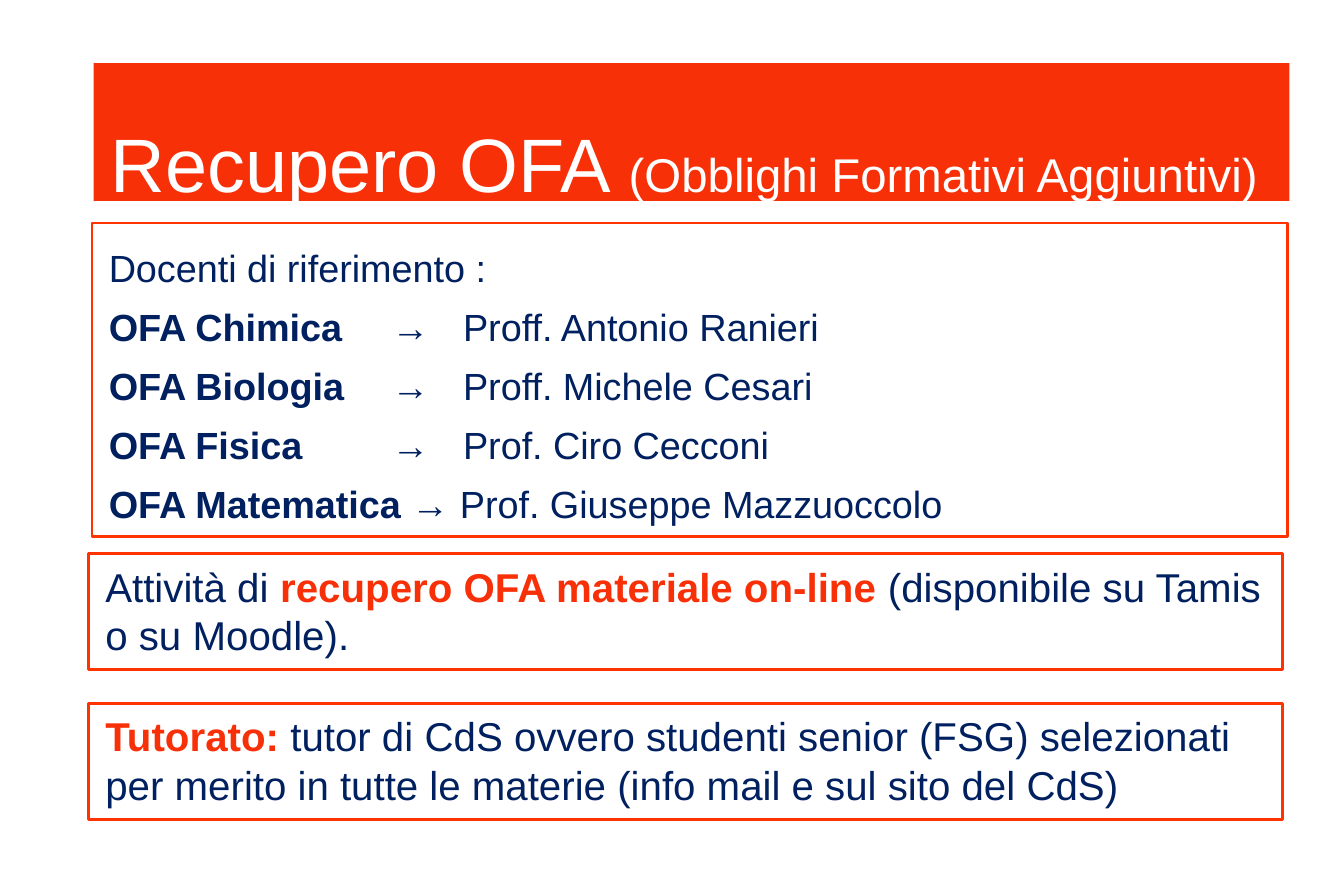
"""Build the slide on OFA recovery: contacts, online material and tutoring."""
import pptx
import pptx.dml.color
import pptx.enum.text
import pptx.oxml
import pptx.oxml.ns
import pptx.util

Inches = pptx.util.Inches
Pt = pptx.util.Pt
RGB = pptx.dml.color.RGBColor.from_string
COLORS = {"red": "F83008", "border": "FF3300", "navy": "002060", "white": "FFFFFF"}


def add_box(left, top, width, height, border=True):
    sp = slide.shapes.add_textbox(Inches(left), Inches(top), Inches(width), Inches(height))
    if border:
        sp.line.color.rgb = RGB(COLORS["border"])
        sp.line.width = Pt(1.25)
    sp.text_frame.word_wrap = True
    sp.text_frame.auto_size = pptx.enum.text.MSO_AUTO_SIZE.SHAPE_TO_FIT_TEXT
    return sp


def add_run(p, text, color=None, bold=None, size=None):
    r = p.add_run()
    r.text = text
    r.font.bold = bold
    if color:
        r.font.color.rgb = RGB(COLORS[color])
    if size:
        r.font.size = Pt(size)


prs = pptx.Presentation()
prs.slide_width = Inches(7.89)
prs.slide_height = Inches(5.12)
slide = prs.slides.add_slide(prs.slide_layouts[6])

title = add_box(0.55, 0.37, 7.02, 0.81, border=False)
title.fill.solid()
title.fill.fore_color.rgb = RGB(COLORS["red"])
p = title.text_frame.paragraphs[0]
p.line_spacing = 1.5
p.font.name = "Arial"
p.font.color.rgb = RGB(COLORS["white"])
add_run(p, "Recupero OFA ", size=32)
add_run(p, "(Obblighi Formativi Aggiuntivi)", size=20)

contacts = [
    ("", "Docenti di riferimento :"),
    ("OFA Chimica", "\t→\tProff. Antonio Ranieri"),
    ("OFA Biologia", "\t→\tProff. Michele Cesari"),
    ("OFA Fisica\t→\t", "Prof. Ciro Cecconi"),
    ("OFA Matematica → ", "Prof. Giuseppe Mazzuoccolo"),
]
tf = add_box(0.54, 1.31, 7.02, 1.84).text_frame
for i, (subject, teacher) in enumerate(contacts):
    p = tf.add_paragraph() if i else tf.paragraphs[0]
    p.alignment = pptx.enum.text.PP_ALIGN.JUSTIFY
    p.line_spacing = 1.3
    tabs = pptx.oxml.parse_xml(f"<a:tabLst {pptx.oxml.ns.nsdecls('a')}/>")
    for stop in (1.66, 2.08):
        tab = tabs.makeelement(pptx.oxml.ns.qn("a:tab"), {"pos": str(Inches(stop)), "algn": "l"})
        tabs.append(tab)
    p._p.get_or_add_pPr().append(tabs)
    p.font.name = "Arial"
    p.font.size = Pt(16)
    p.font.color.rgb = RGB(COLORS["navy"])
    if subject:
        add_run(p, subject, bold=True)
    add_run(p, teacher)

notices = [
    (3.25, [("Attività di ", "navy", False),
            ("recupero OFA materiale on-line ", "red", True),
            ("(disponibile su Tamis o su Moodle).", "navy", False)]),
    (4.13, [("Tutorato:", "red", True),
            (" tutor di CdS ovvero studenti senior (FSG) selezionati per merito "
             "in tutte le materie (info mail e sul sito del CdS)", "navy", False)]),
]
for top, runs in notices:
    p = add_box(0.52, top, 7.01, 0.68).text_frame.paragraphs[0]
    p.font.name = "Arial"
    p.font.size = Pt(17)
    for text, color, bold in runs:
        add_run(p, text, color, bold)

prs.save("out.pptx")
